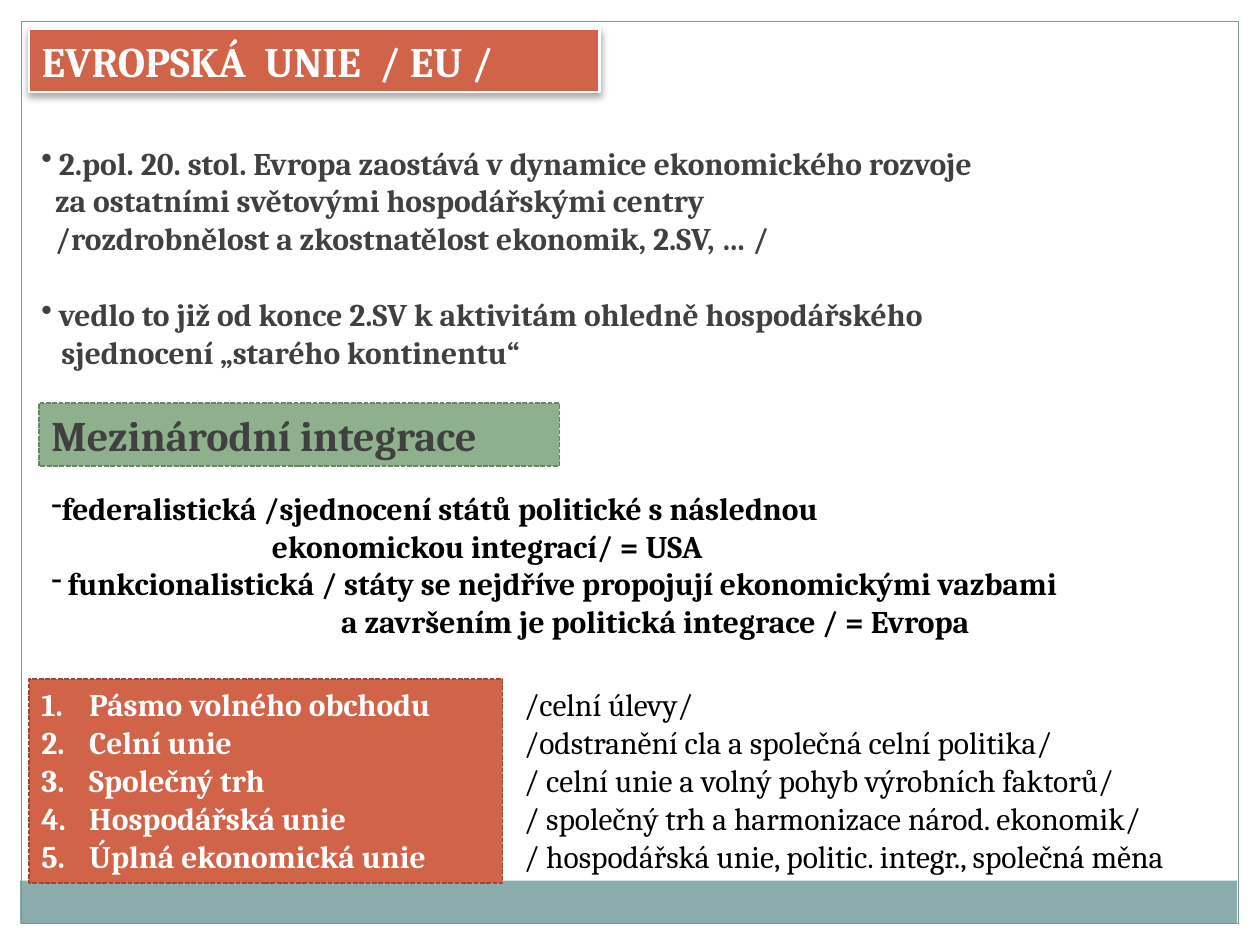
from lxml import etree
from pptx import Presentation
from pptx.dml.color import RGBColor
from pptx.enum.dml import MSO_LINE
from pptx.enum.shapes import MSO_SHAPE
from pptx.enum.text import MSO_ANCHOR, MSO_AUTO_SIZE, PP_ALIGN
from pptx.oxml.ns import qn
from pptx.util import Inches, Pt

RECTANGLE = MSO_SHAPE.RECTANGLE
DASH = MSO_LINE.SQUARE_DOT
LEFT = PP_ALIGN.LEFT
TOP = MSO_ANCHOR.TOP
NO_AUTOFIT = MSO_AUTO_SIZE.NONE

WHITE, BLACK, GRAY = "FFFFFF", "000000", "404040"
RED, GREEN, TEAL = "D16349", "8FB08C", "8CADAE"
NUMBERED = "1."
BLANK_LINE = 21.7

# Each line: text, bullet, text indent in inches, space before in points
HISTORY = [
    ("2.pol. 20. stol. Evropa zaostává v dynamice ekonomického rozvoje", "•", 0.14, 0),
    ("za ostatními světovými hospodářskými centry", None, 0.11, 0),
    ("/rozdrobnělost a zkostnatělost ekonomik, 2.SV, … /", None, 0.11, 0),
    ("vedlo to již od konce 2.SV k aktivitám ohledně hospodářského", "•", 0.14, BLANK_LINE),
    ("sjednocení „starého kontinentu“", None, 0.16, 0),
]
INTEGRATION = [
    ("federalistická /sjednocení států politické s následnou", "-", 0.08, 0),
    ("ekonomickou integrací/ = USA", None, 1.75, 0),
    ("funkcionalistická / státy se nejdříve propojují ekonomickými vazbami", "-", 0.13, 0),
    ("a završením je politická integrace / = Evropa", None, 2.3, 0),
]
STAGES = [
    ("Pásmo volného obchodu", "/celní úlevy/"),
    ("Celní unie", "/odstranění cla a společná celní politika/"),
    ("Společný trh", "/ celní unie a volný pohyb výrobních faktorů/"),
    ("Hospodářská unie", "/ společný trh a harmonizace národ. ekonomik/"),
    ("Úplná ekonomická unie", "/ hospodářská unie, politic. integr., společná měna"),
]


def color(value):
    return RGBColor.from_string(value)


class SlideBuilder:
    font = "Cambria"

    def __init__(self, slide):
        self.slide = slide

    def paint(self, shape, fill=None, line=None, width=0.75, dash=None):
        if fill:
            shape.fill.solid()
            shape.fill.fore_color.rgb = color(fill)
        else:
            shape.fill.background()
        if line:
            shape.line.color.rgb = color(line)
            shape.line.width = Pt(width)
            if dash:
                shape.line.dash_style = dash
        else:
            shape.line.fill.background()
        shape.shadow.inherit = False

    def panel(self, place, **style):
        shape = self.slide.shapes.add_shape(RECTANGLE, *map(Inches, place))
        self.paint(shape, **style)
        return shape

    def bullet(self, para, mark):
        properties = para._p.get_or_add_pPr()
        if mark == NUMBERED:
            etree.SubElement(properties, qn("a:buAutoNum"), type="arabicPeriod")
        else:
            etree.SubElement(properties, qn("a:buChar"), char=mark)

    def add_lines(self, shape, lines, size, ink, bold=True):
        frame = shape.text_frame
        frame.word_wrap = True
        frame.auto_size = NO_AUTOFIT
        frame.vertical_anchor = TOP
        for index, (text, mark, indent, space) in enumerate(lines):
            para = frame.paragraphs[0] if index == 0 else frame.add_paragraph()
            para.alignment = LEFT
            properties = para._p.get_or_add_pPr()
            properties.set("marL", str(Inches(indent)))
            properties.set("indent", str(-Inches(indent) if mark else 0))
            if mark:
                self.bullet(para, mark)
            if space:
                para.space_before = Pt(space)
            span = para.add_run()
            span.text = text
            span.font.name = self.font
            span.font.size = Pt(size)
            span.font.bold = bold
            span.font.color.rgb = color(ink)

    def text(self, place, lines, ink, bold=True):
        box = self.slide.shapes.add_textbox(*map(Inches, place))
        self.add_lines(box, lines, 18, ink, bold)

    def title(self, place, text):
        title = self.slide.shapes.title
        title.left, title.top, title.width, title.height = map(Inches, place)
        self.paint(title, RED, WHITE, 1.57)
        self.drop_shadow(title)
        self.add_lines(title, [(text, None, 0, 0)], 24, WHITE)

    def drop_shadow(self, shape):
        effects = shape._element.spPr.find(qn("a:effectLst"))
        shadow = etree.SubElement(
            effects, qn("a:outerShdw"), blurRad=str(Pt(4)), dist=str(Pt(2)),
            dir="5400000", rotWithShape="0")
        shade = etree.SubElement(shadow, qn("a:srgbClr"), val=BLACK)
        etree.SubElement(shade, qn("a:alpha"), val="35000")


def main():
    deck = Presentation()
    deck.slide_width, deck.slide_height = Inches(10), Inches(7.5)
    page = SlideBuilder(deck.slides.add_slide(deck.slide_layouts[5]))

    page.panel((0.16, 6.99, 9.66, 0.34), fill=TEAL)
    page.panel((0.17, 0.17, 9.66, 7.16), line="7C999A")
    page.title((0.23, 0.23, 4.53, 0.5), "EVROPSKÁ  UNIE  / EU /")
    page.text((0.23, 1.09, 8.93, 1.92), HISTORY, GRAY)

    heading = page.panel((0.31, 3.2, 4.13, 0.5), fill=GREEN, line="6A8268", width=0.9, dash=DASH)
    page.add_lines(heading, [("Mezinárodní integrace", None, 0, 0)], 24, GRAY)
    page.text((0.31, 3.83, 9.4, 1.31), INTEGRATION, BLACK)

    stages = page.panel((0.23, 5.39, 3.76, 1.62), fill=RED, line="9B4936", width=0.9, dash=DASH)
    page.add_lines(stages, [(name, NUMBERED, 0.38, 0) for name, _ in STAGES], 18, WHITE)
    notes = [(note, None, 0, 0) for _, note in STAGES]
    page.text((4.06, 5.39, 5.84, 1.62), notes, BLACK, bold=False)

    deck.save("out.pptx")


if __name__ == "__main__":
    main()
